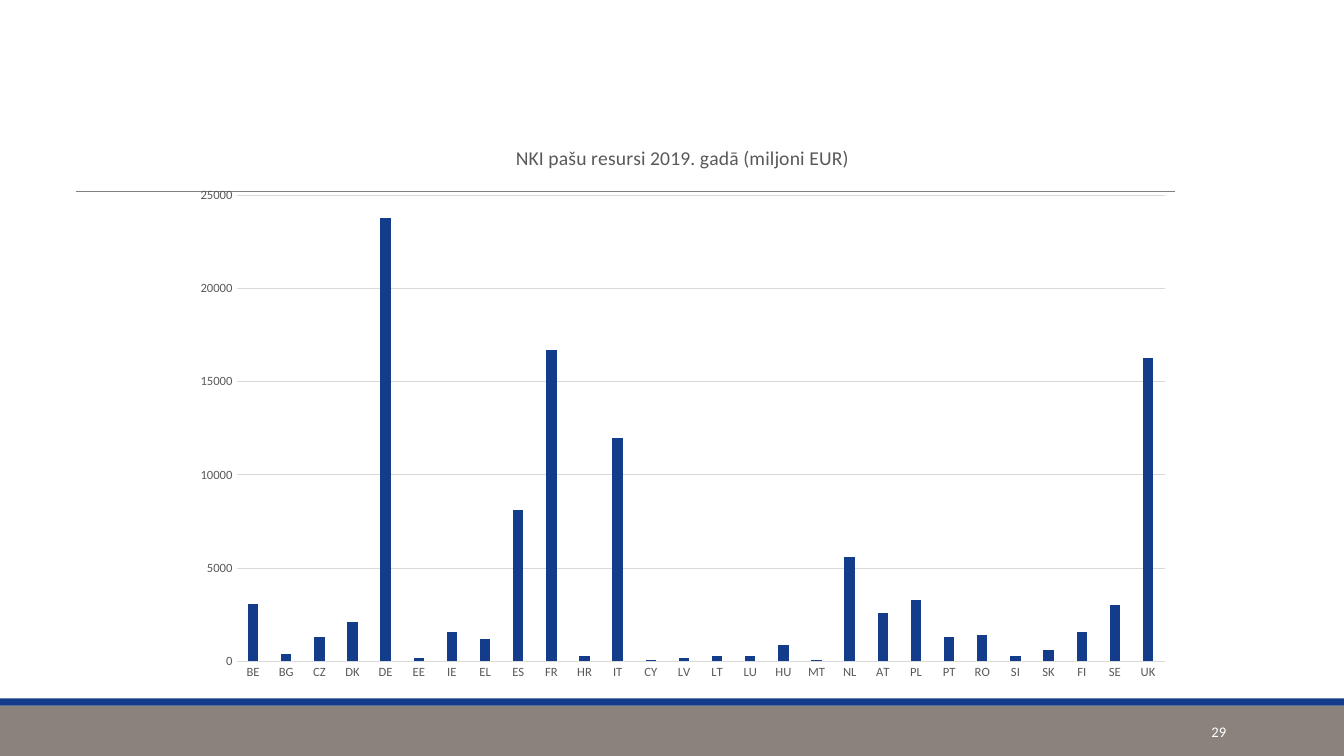
from dataclasses import dataclass

from lxml import etree
from pptx import Presentation
from pptx import util as u
from pptx.chart.data import CategoryChartData
from pptx.dml.color import RGBColor
from pptx.enum import chart as ch, shapes, text
from pptx.oxml.ns import qn


@dataclass(frozen=True)
class Theme:
    font: str = "Calibri"
    blue: str = "133C8B"
    taupe: str = "8B827B"
    rule: str = "808080"
    grid: str = "D9D9D9"
    label: str = "595959"
    white: str = "FFFFFF"
    title_size: float = 14
    base_size: float = 10
    axis_size: float = 9
    number_size: float = 10.5


THEME = Theme()
WIDTH, HEIGHT = 13.33, 7.5
TITLE = "NKI pašu resursi 2019. gadā (miljoni EUR)"
RESOURCES = {
    "BE": 3100, "BG": 400, "CZ": 1300, "DK": 2100, "DE": 23800, "EE": 200, "IE": 1600,
    "EL": 1200, "ES": 8100, "FR": 16700, "HR": 300, "IT": 12000, "CY": 100, "LV": 200,
    "LT": 300, "LU": 300, "HU": 900, "MT": 100, "NL": 5600, "AT": 2600, "PL": 3300,
    "PT": 1300, "RO": 1400, "SI": 300, "SK": 600, "FI": 1600, "SE": 3000, "UK": 16300,
}


def inches(*lengths):
    return [u.Inches(n) for n in lengths]


def set_font(font, size, color):
    font.name = THEME.font
    font.size = u.Pt(size)
    font.bold = False
    font.color.rgb = RGBColor.from_string(color)


def set_line(line, width, color):
    line.width = u.Pt(width)
    line.color.rgb = RGBColor.from_string(color)


def add_band(s, x, y, w, h, color):
    sp = s.shapes.add_shape(shapes.MSO_SHAPE.RECTANGLE, *inches(x, y, w, h))
    sp.shadow.inherit = False
    sp.fill.solid()
    sp.fill.fore_color.rgb = RGBColor.from_string(color)
    sp.line.fill.background()


def add_footer(s, x, y, w, h, number):
    """Blue strip over a taupe band, with the slide number at the right."""
    strip = 0.07
    add_band(s, x, y + strip, w, h - strip, THEME.taupe)
    add_band(s, x, y, w, strip, THEME.blue)
    sp = s.shapes.add_textbox(*inches(x + w - 2.5, y + 0.13, 1.43, 0.4))
    tf = sp.text_frame
    tf.word_wrap = True
    tf.vertical_anchor = text.MSO_ANCHOR.MIDDLE
    p = tf.paragraphs[0]
    p.text = str(number)
    p.alignment = text.PP_ALIGN.RIGHT
    set_font(p.runs[0].font, THEME.number_size, THEME.white)


def add_rule(s, x, y, w):
    line = s.shapes.add_connector(shapes.MSO_CONNECTOR.STRAIGHT, *inches(x, y, x + w, y))
    set_line(line.line, 0.5, THEME.rule)
    etree.SubElement(line._element.spPr, qn("a:effectLst"))


def add_resources_chart(s, x, y, w, h):
    data = CategoryChartData(number_format="General")
    data.categories = list(RESOURCES)
    data.add_series(TITLE, list(RESOURCES.values()))
    chart = s.shapes.add_chart(
        ch.XL_CHART_TYPE.COLUMN_CLUSTERED, *inches(x, y, w, h), data).chart
    chart.font.name = THEME.font
    chart.font.size = u.Pt(THEME.base_size)
    chart.has_legend = False
    chart.has_title = True
    tf = chart.chart_title.text_frame
    tf.text = TITLE
    set_font(tf.paragraphs[0].runs[0].font, THEME.title_size, THEME.label)
    chart.chart_title.include_in_layout = False

    plot = chart.plots[0]
    plot.vary_by_categories = False
    plot.gap_width, plot.overlap = 219, -27
    fill = plot.series[0].format.fill
    fill.solid()
    fill.fore_color.rgb = RGBColor.from_string(THEME.blue)

    for axis in (chart.category_axis, chart.value_axis):
        axis.major_tick_mark = axis.minor_tick_mark = ch.XL_TICK_MARK.NONE
        set_font(axis.tick_labels.font, THEME.axis_size, THEME.label)
    set_line(chart.category_axis.format.line, 0.75, THEME.grid)
    values = chart.value_axis
    values.minimum_scale, values.maximum_scale, values.major_unit = 0, 25000, 5000
    values.format.line.fill.background()
    set_line(values.major_gridlines.format.line, 0.75, THEME.grid)


def main():
    prs = Presentation()
    prs.slide_width, prs.slide_height = inches(WIDTH, HEIGHT)
    s = prs.slides.add_slide(prs.slide_layouts[6])
    add_rule(s, 0.75, 1.9, 10.9)
    add_resources_chart(s, 1.79, 1.23, 9.96, 5.63)
    add_footer(s, 0, 6.93, WIDTH, HEIGHT - 6.93, 29)
    prs.save("out.pptx")


if __name__ == "__main__":
    main()
